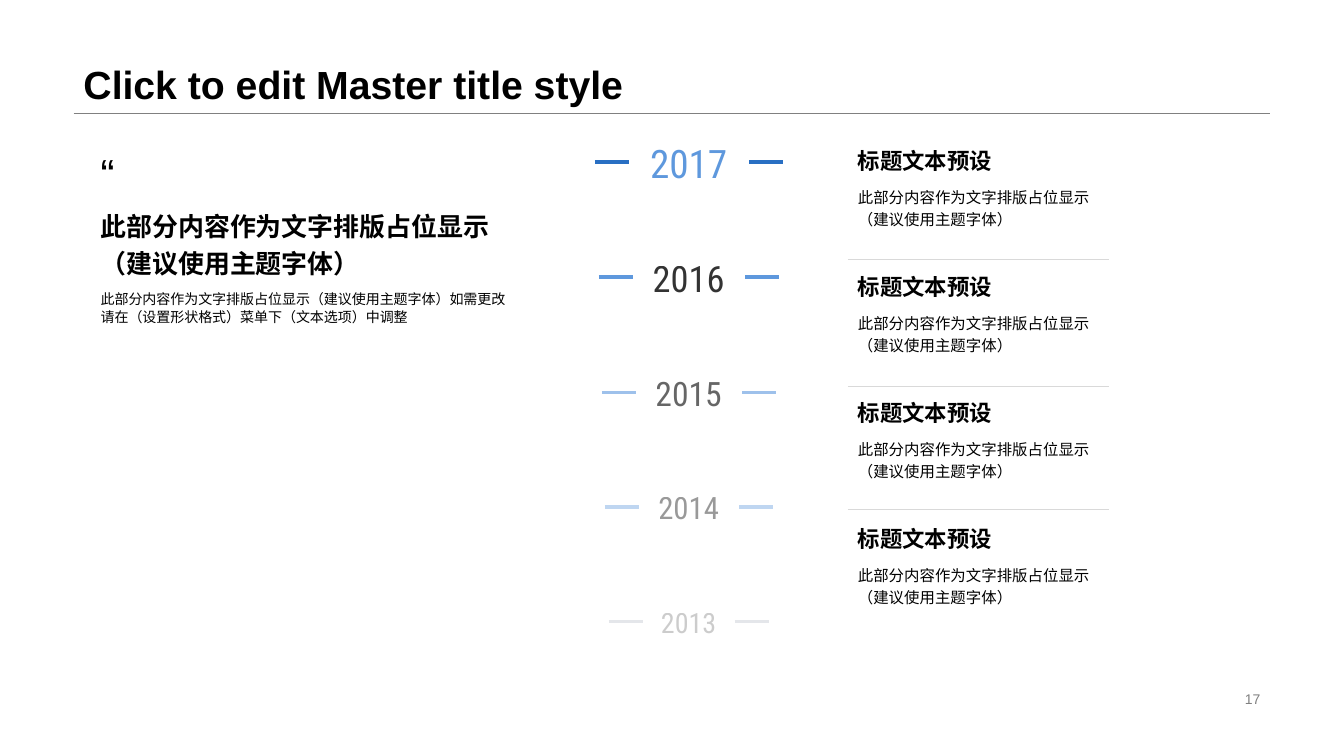
from lxml.etree import SubElement
from pptx import Presentation
from pptx.dml.color import RGBColor
from pptx.enum.shapes import MSO_CONNECTOR
from pptx.enum.text import MSO_ANCHOR, PP_ALIGN
from pptx.oxml.ns import qn
from pptx.util import Emu, Pt

PX = 9144  # EMU per px, 100 px to the inch

BLACK = RGBColor(0x00, 0x00, 0x00)
GREY = RGBColor(0x80, 0x80, 0x80)
LIGHT_GREY = RGBColor(0xD9, 0xD9, 0xD9)
BLUE = RGBColor(0x5E, 0x98, 0xDD)
DARK_BLUE = RGBColor(0x29, 0x6F, 0xC3)
SOFT_BLUE = RGBColor(0x9E, 0xC1, 0xEB)
PALE_BLUE = RGBColor(0xBF, 0xD6, 0xF1)
PALE_GREY = RGBColor(0xE4, 0xE6, 0xEA)

PLACEHOLDER = "此部分内容作为文字排版占位显示\n（建议使用主题字体）"
DETAIL = ("此部分内容作为文字排版占位显示（建议使用主题字体）如需更改"
          "请在（设置形状格式）菜单下（文本选项）中调整")
HEADING = "标题文本预设"

# year, text colour, opacity in percent, dash colour, dash width
YEARS = [
    ("2017", BLUE, 100, DARK_BLUE, 3),
    ("2016", BLACK, 80, BLUE, 2.5),
    ("2015", BLACK, 60, SOFT_BLUE, 2.2),
    ("2014", BLACK, 40, PALE_BLUE, 2.2),
    ("2013", BLACK, 20, PALE_GREY, 2),
]
YEAR_STEP = 114
DASH_LENGTH = 34
SECTION_COUNT = 4
SECTION_STEP = 125
DIVIDER_TOPS = (257, 383, 505)


def px(value):
    return Emu(value * PX)


def add_text(slide, box, text, size, color=BLACK, bold=False, font="Arial",
             align=PP_ALIGN.LEFT, anchor=MSO_ANCHOR.MIDDLE, spacing=1.0,
             wrap=True, opacity=100):
    """Add a one-paragraph text box; box is left, top, width, height in px."""
    tf = slide.shapes.add_textbox(*map(px, box)).text_frame
    tf.word_wrap = wrap
    tf.vertical_anchor = anchor
    p = tf.paragraphs[0]
    p.text = text
    p.alignment = align
    p.line_spacing = spacing
    p.font.name = font
    p.font.size = Pt(size)
    p.font.bold = bold
    p.font.color.rgb = color
    if opacity < 100:
        for clr in p._p.iter(qn("a:srgbClr")):
            SubElement(clr, qn("a:alpha"), val=str(opacity * 1000))


def add_rule(slide, left, top, width, color, weight):
    """Add a horizontal line without a shadow."""
    line = slide.shapes.add_connector(
        MSO_CONNECTOR.STRAIGHT, px(left), px(top), px(left + width), px(top))
    line.line.color.rgb = color
    line.line.width = Pt(weight)
    SubElement(line._element.spPr, qn("a:effectLst"))


def add_header(slide):
    add_rule(slide, 73, 112, 1187, GREY, 0.25)
    add_text(slide, (73, 0, 1187, 112), "Click to edit Master title style", 28,
             bold=True, anchor=MSO_ANCHOR.BOTTOM, spacing=0.9)


def add_quote(slide):
    add_text(slide, (90, 144, 45, 54), "“", 30)
    add_text(slide, (90, 198, 426, 83), PLACEHOLDER, 18.5, bold=True, spacing=1.2)
    add_text(slide, (90, 281, 426, 47), DETAIL, 10, spacing=1.1)


def add_timeline(slide):
    """Add the years, each smaller than the last, with dashes closing in."""
    for i, (year, color, opacity, dash_color, weight) in enumerate(YEARS):
        top = 133 + i * YEAR_STEP
        add_text(slide, (627, top, 112, 57), year, 28 - 2 * i, color,
                 font="Roboto Condensed", align=PP_ALIGN.CENTER, wrap=False,
                 opacity=opacity)
        left = round(590 + 3.5 * i)
        for dash_left in (left, 1333 - left):
            add_rule(slide, dash_left, top + 28, DASH_LENGTH, dash_color, weight)


def add_sections(slide):
    for top in DIVIDER_TOPS:
        add_rule(slide, 841, top, 259, LIGHT_GREY, 0.75)
    for i in range(SECTION_COUNT):
        top = 143 + i * SECTION_STEP
        add_text(slide, (841, top, 282, 35), HEADING, 16, bold=True,
                 anchor=MSO_ANCHOR.BOTTOM, wrap=False)
        add_text(slide, (841, top + 35, 282, 79), PLACEHOLDER, 11,
                 anchor=MSO_ANCHOR.TOP, spacing=1.2)


def main():
    prs = Presentation()
    prs.slide_width, prs.slide_height = px(1333), px(750)
    slide = prs.slides.add_slide(prs.slide_layouts[6])
    add_header(slide)
    add_quote(slide)
    add_timeline(slide)
    add_sections(slide)
    add_text(slide, (942, 682, 318, 23), "17", 10, GREY, align=PP_ALIGN.RIGHT)
    prs.save("out.pptx")


if __name__ == "__main__":
    main()
